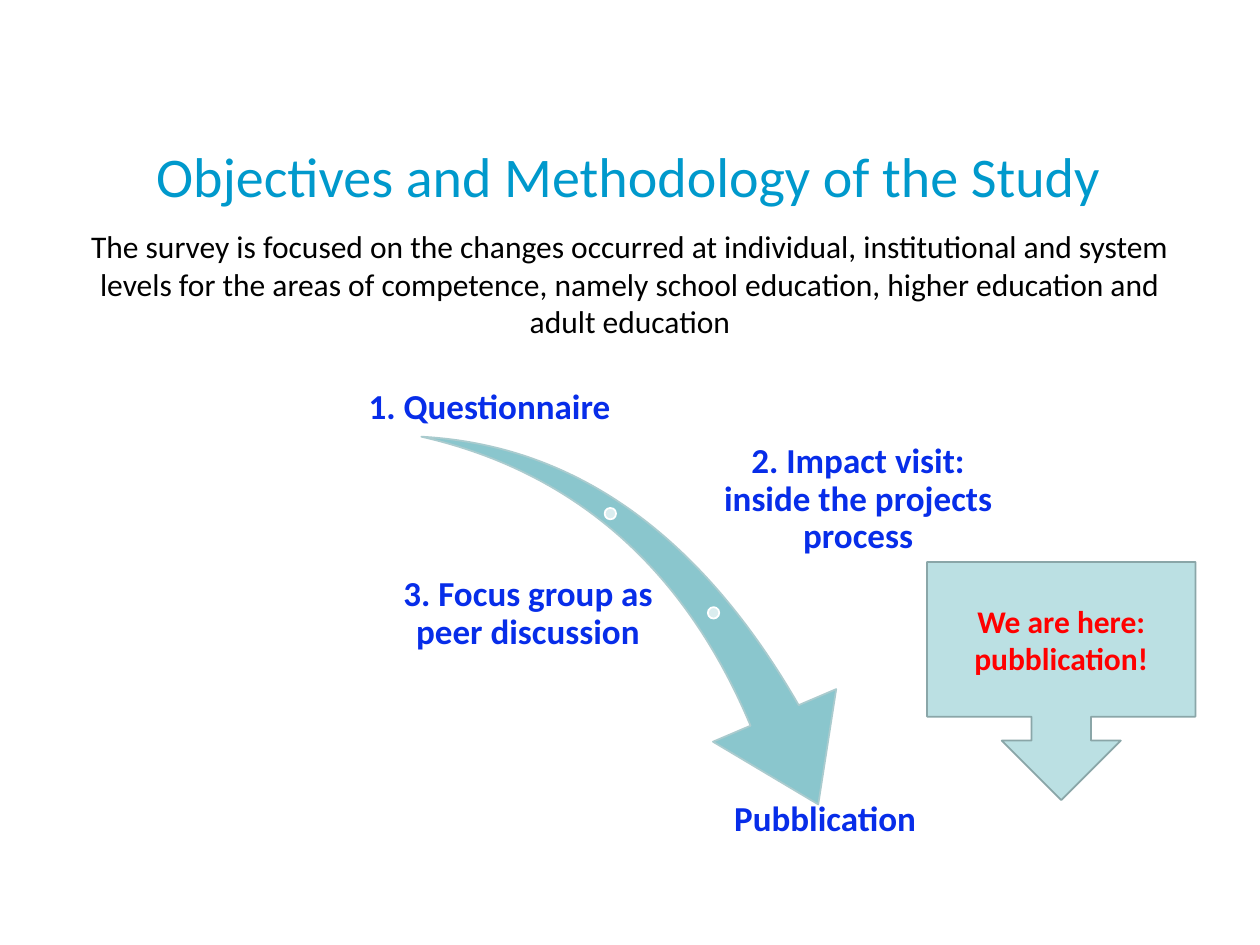
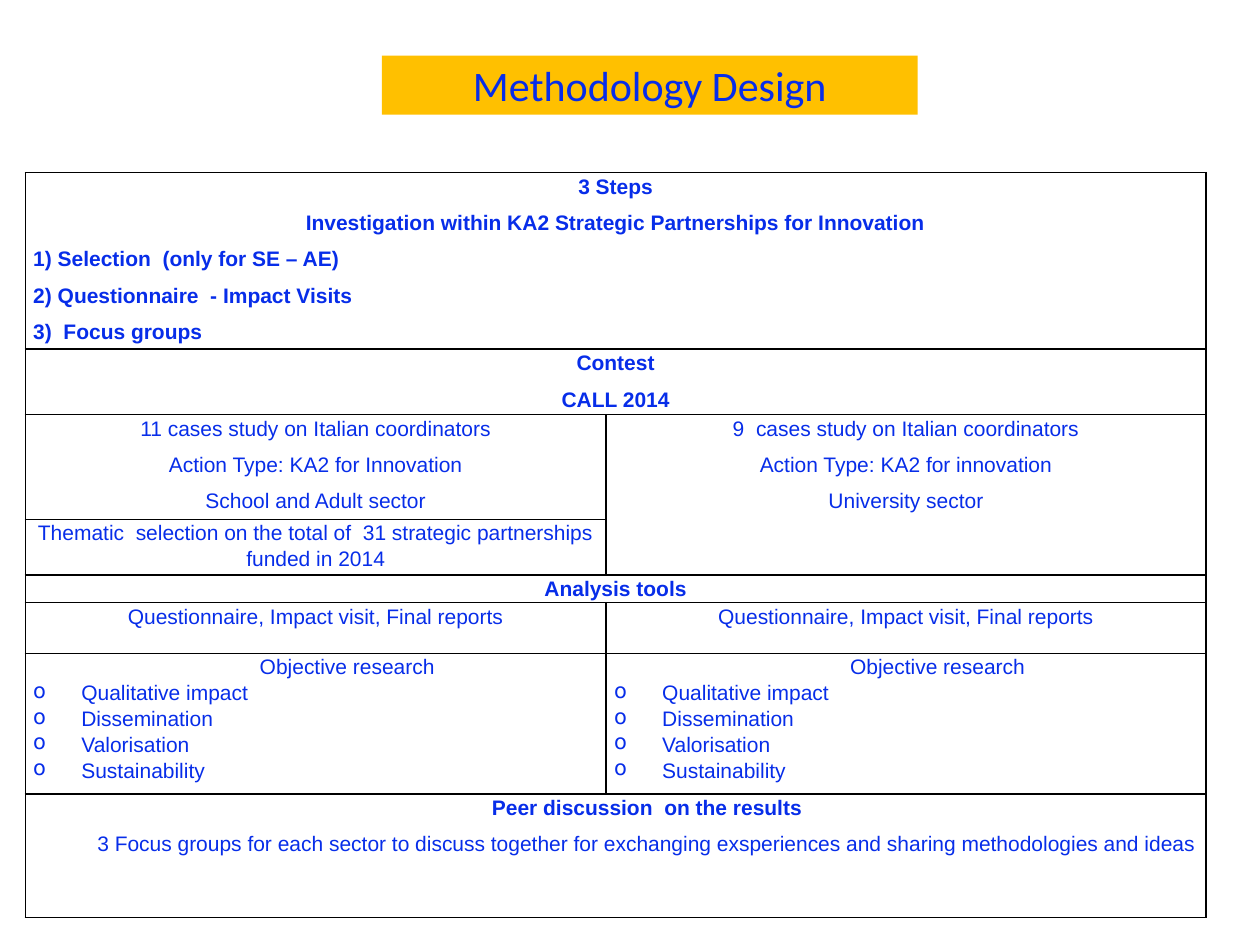
from lxml import etree
from pptx import Presentation
from pptx import util as u
from pptx.dml.color import RGBColor
from pptx.enum import shapes, text
from pptx.oxml.ns import qn

Cm = u.Cm
HUES = {
    "blue": "072DE9", "sky": "0099CC", "black": "000000", "red": "FF0000",
    "gold": "FFC000", "teal": "8AC6CD", "edge": "AACBCE", "dot": "DAEDEF",
    "white": "FFFFFF", "pale": "BBE0E3", "rim": "8AA6A8",
}
ALIGN = {"c": text.PP_ALIGN.CENTER, "l": text.PP_ALIGN.LEFT}
MID, TOP, LOW = (text.MSO_ANCHOR.MIDDLE, text.MSO_ANCHOR.TOP,
                 text.MSO_ANCHOR.BOTTOM)

AIM = ("The survey is focused on the changes occurred at individual, "
       "institutional and system levels for the areas of competence, namely "
       "school education, higher education and adult education")
STEPS = [
    ("1. Questionnaire", (5.97, 6.93, 7.8, 1.75), LOW),
    ("2. Impact visit: inside the projects process", (14.25, 9.35, 6.1, 1.45), MID),
    ("3. Focus group as peer discussion", (7.65, 11.51, 5.99, 1.75), MID),
    ("Pubblication", (13.64, 16.08, 5.99, 1.75), TOP),
]
DOTS = [(12.19, 10.24), (14.27, 12.24)]

COLS = [11.71, 12.09]
ROWS = [3.56, 1.32, 2.11, 1.12, 0.56, 1.02, 2.84, 2.49]
BOLD = {"bold": True}
LEFT = {"bold": True, "align": "l"}
DEEP = {"left": 1.27}
GOALS = [("Objective research", {"left": 1.27, "after": 0})] + [
    (goal, {"align": "l", "left": 0.97, "bullet": "o", "after": 0})
    for goal in ("Qualitative impact", "Dissemination", "Valorisation",
                 "Sustainability")]
TOOLS = [("Questionnaire, Impact visit, Final reports", {})]
CELLS = [
    (0, 0, 1, 2, [
        ("3 Steps", BOLD),
        ("Investigation within KA2 Strategic Partnerships for Innovation", BOLD),
        ("1) Selection  (only for SE – AE)", LEFT),
        ("2) Questionnaire  - Impact Visits", LEFT),
        ("3)  Focus groups", LEFT)]),
    (1, 0, 1, 2, [("Contest", BOLD), ("CALL 2014", BOLD)]),
    (2, 0, 1, 1, [
        ("11 cases study on Italian coordinators", {}),
        ("Action Type: KA2 for Innovation", {}),
        ("School and Adult sector", {})]),
    (2, 1, 2, 1, [
        ("9  cases study on Italian coordinators", {}),
        ("Action Type: KA2 for innovation", {}),
        ("University sector", {})]),
    (3, 0, 1, 1, [("Thematic  selection on the total of  31 strategic "
                   "partnerships funded in 2014", {})]),
    (4, 0, 1, 2, [("Analysis tools", BOLD)]),
    (5, 0, 1, 1, TOOLS),
    (5, 1, 1, 1, TOOLS),
    (6, 0, 1, 1, GOALS),
    (6, 1, 1, 1, GOALS),
    (7, 0, 1, 2, [
        ("Peer discussion  on the results", {**BOLD, **DEEP}),
        ("3 Focus groups for each sector to discuss together for exchanging "
         "exsperiences and sharing methodologies and ideas", DEEP)]),
]


def rgb(name):
    return RGBColor.from_string(HUES[name])


def write(par, words, size=18, hue="black", font="Calibri", bold=False,
          align="c", space=None, after=None, left=0, bullet=None):
    par.alignment = ALIGN[align]
    if space:
        par.line_spacing = space
    if after is not None:
        par.space_after = u.Pt(after)
    props = par._p.get_or_add_pPr()
    if left:
        props.set("marL", str(Cm(left)))
        props.set("indent", str(-Cm(left) if bullet else 0))
    if bullet:
        etree.SubElement(props, qn("a:buChar")).set("char", bullet)
    run = par.add_run()
    run.text = words
    run.font.size, run.font.bold, run.font.name = u.Pt(size), bold, font
    run.font.color.rgb = rgb(hue)


def fit(frame, anchor, pad=None):
    frame.word_wrap = True
    frame.auto_size = text.MSO_AUTO_SIZE.NONE
    frame.vertical_anchor = anchor
    if pad is not None:
        frame.margin_left = frame.margin_right = Cm(pad)
        frame.margin_top = frame.margin_bottom = Cm(pad)


def head(deck, words, box, anchor, **form):
    slide = deck.slides.add_slide(deck.slide_layouts[5])
    title = slide.shapes.title
    title.left, title.top, title.width, title.height = map(Cm, box)
    fit(title.text_frame, anchor)
    write(title.text_frame.paragraphs[0], words, **form)
    return slide, title


def label(slide, words, box, anchor, pad=None, **form):
    frame = slide.shapes.add_textbox(*map(Cm, box)).text_frame
    fit(frame, anchor, pad)
    write(frame.paragraphs[0], words, **form)


def draw(slide, kind, box, fill, line):
    item = slide.shapes.add_shape(kind, *map(Cm, box))
    item.shadow.inherit = False
    item.fill.solid()
    item.fill.fore_color.rgb = rgb(fill)
    item.line.color.rgb = rgb(line)
    item.line.width = u.Pt(1)
    return item


def frame_cell(cell):
    cell.fill.background()
    cell.margin_left = cell.margin_right = Cm(0.16)
    cell.margin_top = cell.margin_bottom = 0
    props = cell._tc.get_or_add_tcPr()
    for spot, side in enumerate(("lnL", "lnR", "lnT", "lnB")):
        line = etree.Element(qn("a:" + side), w=str(u.Pt(1)))
        fill = etree.SubElement(line, qn("a:solidFill"))
        etree.SubElement(fill, qn("a:srgbClr")).set("val", HUES["black"])
        props.insert(spot, line)


def aims(deck):
    slide, title = head(deck, "Objectives and Methodology of the Study",
                        (1.24, 1.32, 22.86, 3.18), LOW, size=32, hue="sky")
    title.text_frame.margin_bottom = Cm(0.29)
    label(slide, AIM, (1.27, 4.45, 22.86, 2.6), TOP)
    kind = shapes.MSO_SHAPE
    swoosh = draw(slide, kind.SWOOSH_ARROW, (8.28, 9.09, 9.4, 6.55),
                  "teal", "edge")
    swoosh.rotation = 73.3
    swoosh.adjustments[0], swoosh.adjustments[1] = 0.16, 0.31
    for left, top in DOTS:
        draw(slide, kind.OVAL, (left, top, 0.23, 0.23), "dot", "white")
    for words, box, anchor in STEPS:
        label(slide, words, box, anchor, pad=0.08, size=20, hue="blue",
              bold=True, space=0.9)
    here = draw(slide, kind.DOWN_ARROW_CALLOUT, (18.69, 11.33, 5.41, 4.8),
                "pale", "rim")
    fit(here.text_frame, MID)
    write(here.text_frame.paragraphs[0], "We are here: pubblication!",
          hue="red", bold=True)


def design(deck):
    slide, title = head(deck, "Methodology Design", (7.7, 1.12, 10.8, 1.19),
                        MID, size=24, hue="blue")
    title.fill.solid()
    title.fill.fore_color.rgb = rgb("gold")
    grid = slide.shapes.add_table(
        len(ROWS), len(COLS), Cm(0.51), Cm(3.48),
        Cm(sum(COLS)), Cm(sum(ROWS))).table
    grid.first_row = grid.horz_banding = False
    for col, width in zip(grid.columns, COLS):
        col.width = Cm(width)
    for row, height in zip(grid.rows, ROWS):
        row.height = Cm(height)
    for cell in grid.iter_cells():
        frame_cell(cell)
    for row, col, down, across, lines in CELLS:
        cell = grid.cell(row, col)
        if down * across > 1:
            cell.merge(grid.cell(row + down - 1, col + across - 1))
        frame = cell.text_frame
        for spot, (words, form) in enumerate(lines):
            par = frame.add_paragraph() if spot else frame.paragraphs[0]
            write(par, words, **{"size": 12, "hue": "blue", "font": "Arial",
                                 "space": 1.1, "after": 6, **form})


def main():
    deck = Presentation()
    deck.slide_width, deck.slide_height = Cm(25.4), Cm(19.05)
    aims(deck)
    design(deck)
    deck.save("out.pptx")


if __name__ == "__main__":
    main()
